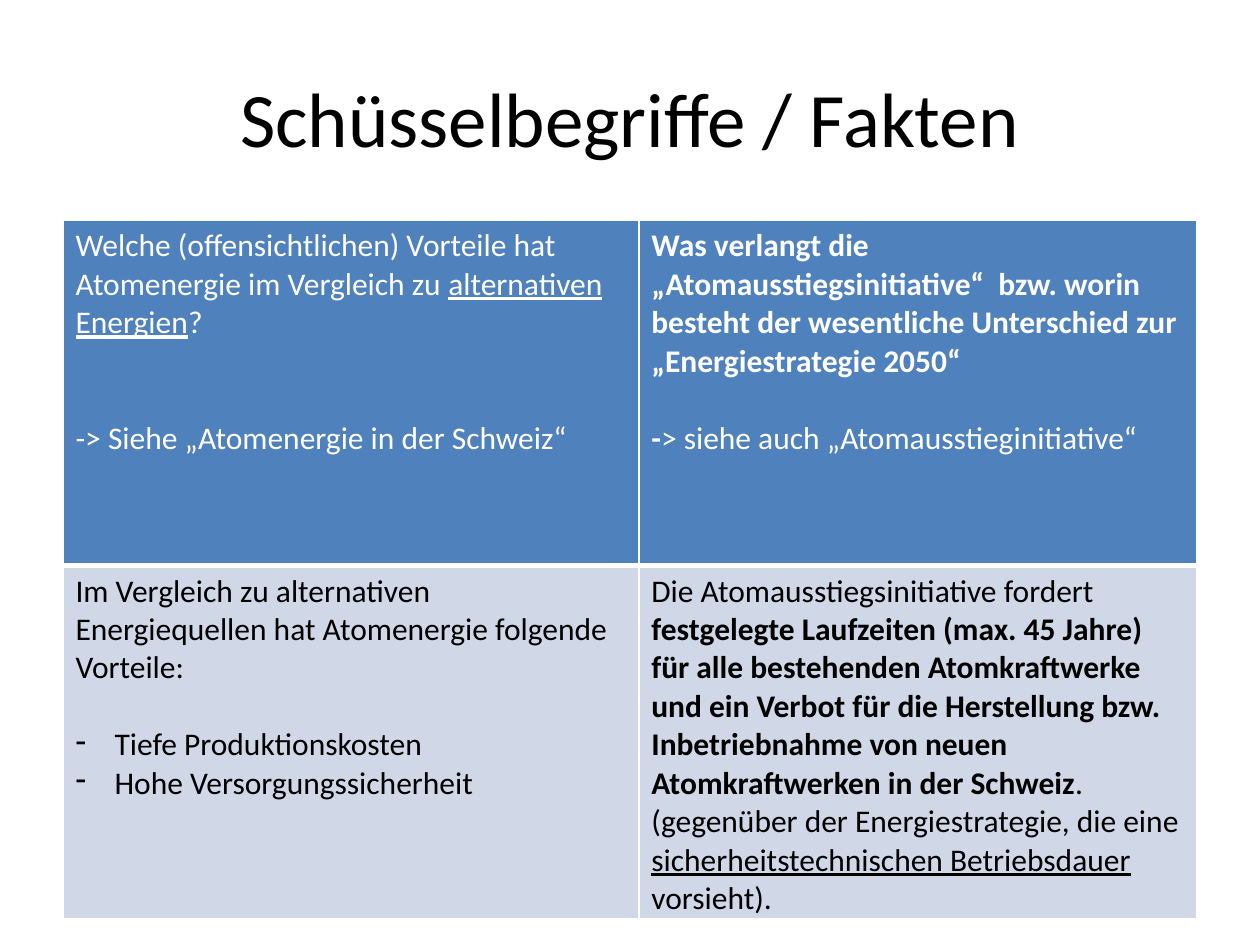
from lxml.etree import SubElement
from pptx import Presentation
from pptx.dml.color import RGBColor
from pptx.enum.text import MSO_ANCHOR, PP_ALIGN
from pptx.oxml.ns import qn
from pptx.util import Inches, Pt

FONT = "Calibri"
WHITE, BLACK = "FFFFFF", "000000"
LINE = 22  # height of one text line in points

# A cell is a list of (gap in lines, bullet, runs); a run is (text, style).
HEAD = [
    [
        (0, "", [
            ("Welche (offensichtlichen) Vorteile hat Atomenergie im Vergleich zu ", ""),
            ("alternativen Energien", "u"),
            ("?", ""),
        ]),
        (2, "", [("-> Siehe „Atomenergie in der Schweiz“", "")]),
    ],
    [
        (0, "", [
            ("Was verlangt die „Atomausstiegsinitiative“  bzw. worin besteht der "
             "wesentliche Unterschied zur „Energiestrategie 2050“", "b"),
        ]),
        (1, "", [("-", "b"), ("> siehe auch „Atomausstieginitiative“", "")]),
    ],
]
BODY = [
    [
        (0, "", [
            ("Im Vergleich zu alternativen Energiequellen hat Atomenergie "
             "folgende Vorteile:", ""),
        ]),
        (1, "-", [("Tiefe Produktionskosten", "")]),
        (0, "-", [("Hohe Versorgungssicherheit", "")]),
    ],
    [
        (0, "", [
            ("Die Atomausstiegsinitiative fordert ", ""),
            ("festgelegte Laufzeiten (max. 45 Jahre) für alle bestehenden "
             "Atomkraftwerke und ein Verbot für die Herstellung bzw. "
             "Inbetriebnahme von neuen Atomkraftwerken in der Schweiz", "b"),
            (".", ""),
        ]),
        (0, "", [
            ("(gegenüber der Energiestrategie, die eine ", ""),
            ("sicherheitstechnischen Betriebsdauer", "u"),
            (" vorsieht).", ""),
        ]),
    ],
]
# Texts, fill, font colour and lower border width of each row
ROWS = [(HEAD, "4F81BD", WHITE, 3), (BODY, "D0D8E8", BLACK, 1)]


def color(code):
    return RGBColor.from_string(code)


def add_run(para, text, size, code, style=""):
    """Add a run; style may hold b for bold and u for underline."""
    run = para.add_run()
    run.text = text
    font = run.font
    font.name, font.size = FONT, Pt(size)
    font.bold, font.underline = "b" in style, "u" in style
    font.color.rgb = color(code)


def add_title(slide, text):
    box = slide.shapes.add_textbox(Inches(0.5), Inches(0.3), Inches(9), Inches(1.25))
    frame = box.text_frame
    frame.word_wrap = True
    frame.vertical_anchor = MSO_ANCHOR.MIDDLE
    para = frame.paragraphs[0]
    para.alignment = PP_ALIGN.CENTER
    add_run(para, text, 44, BLACK)


def set_bullet(para, char):
    props = para._p.get_or_add_pPr()
    props.set("marL", str(Inches(0.31)))
    props.set("indent", str(-Inches(0.31)))
    SubElement(props, qn("a:buChar"), char=char)


def set_border(cell, sides):
    """Draw white cell borders; sides maps each side to its width."""
    props = cell._tc.get_or_add_tcPr()
    for side, width in sides.items():
        line = SubElement(props, qn("a:ln" + side), w=str(Pt(width)))
        fill = SubElement(line, qn("a:solidFill"))
        SubElement(fill, qn("a:srgbClr"), val=WHITE)


def fill_cell(cell, paras, code):
    frame = cell.text_frame
    for i, (gap, bullet, runs) in enumerate(paras):
        para = frame.add_paragraph() if i else frame.paragraphs[0]
        para.space_before = Pt(gap * LINE)
        if bullet:
            set_bullet(para, bullet)
        for text, style in runs:
            add_run(para, text, 18, code, style)


def add_grid(slide):
    frame = slide.shapes.add_table(
        2, 2, Inches(0.5), Inches(1.75), Inches(9), Inches(5.48))
    table = frame.table
    for col, width in zip(table.columns, (4.57, 4.43)):
        col.width = Inches(width)
    top = 1
    for row, (texts, back, code, low) in zip(table.rows, ROWS):
        row.height = Inches(2.74)
        for cell, paras in zip(row.cells, texts):
            set_border(cell, {"L": 1, "R": 1, "T": top, "B": low})
            cell.fill.solid()
            cell.fill.fore_color.rgb = color(back)
            fill_cell(cell, paras, code)
        top = low


def main():
    deck = Presentation()
    deck.slide_width, deck.slide_height = Inches(10), Inches(7.5)
    slide = deck.slides.add_slide(deck.slide_layouts[6])
    add_title(slide, "Schüsselbegriffe / Fakten")
    add_grid(slide)
    deck.save("out.pptx")


if __name__ == "__main__":
    main()
